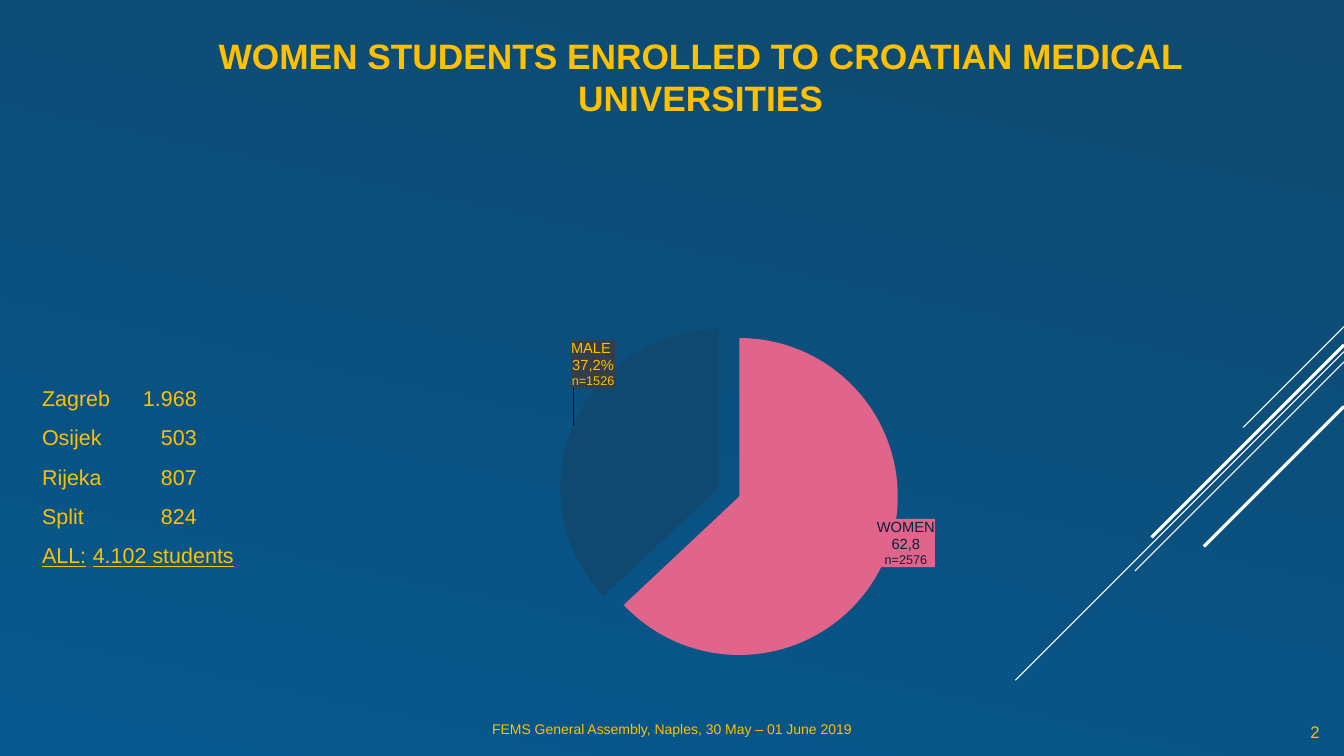
from dataclasses import dataclass

from lxml.etree import SubElement
from pptx import Presentation
from pptx.chart.data import CategoryChartData
from pptx.dml.color import RGBColor
from pptx.enum.chart import XL_CHART_TYPE, XL_LABEL_POSITION
from pptx.enum.shapes import MSO_CONNECTOR
from pptx.enum.text import MSO_ANCHOR, PP_ALIGN
from pptx.oxml import parse_xml
from pptx.oxml.ns import nsdecls, qn
from pptx.slide import Slide
from pptx.util import Cm, Pt

FONT = "Arial"
GOLD = "FFC000"
WIDTH, HEIGHT = 33.87, 19.05


@dataclass
class Stripe:
    """A 45 degree line running down and left from the slide's right edge."""
    top: float
    run: float
    weight: float


@dataclass
class Slice:
    name: str
    value: int
    label: tuple[str, ...]
    fill: str
    label_fill: str
    label_color: str
    explosion: int
    shift: tuple[float, float]


@dataclass
class Row:
    text: str
    tab: float
    tab_align: str = "r"
    underline: bool = False


STRIPES = [
    Stripe(8.23, 2.54, 0.75),
    Stripe(8.86, 8.28, 0.75),
    Stripe(9.12, 5.27, 0.75),
    Stripe(8.69, 4.85, 2.25),
    Stripe(10.24, 3.53, 2.25),
]
SLICES = [
    Slice("WOMEN", 63, ("WOMEN", "62,8", "n=2576"), "E1658B", "E1658B", "0A1F3C", 14, (0.106, 0.028)),
    Slice("MALE", 37, ("MALE ", "37,2%", "n=1526"), "0F496F", "343E4A", GOLD, 0, (-0.06, -0.171)),
]
ROWS = [
    Row("Zagreb\t1.968", 3.9),
    Row("Osijek\t503", 3.9),
    Row("Rijeka\t807", 3.9),
    Row("Split\t824", 3.9),
    Row("ALL:\t4.102 students", 1.28, "l", True),
]


def rgb(color: str) -> RGBColor:
    return RGBColor.from_string(color)


def set_font(font, size: float, color: str = GOLD, bold: bool = False, underline: bool = False) -> None:
    font.name = FONT
    font.size = Pt(size)
    font.bold = bold
    font.underline = underline
    font.color.rgb = rgb(color)


def add_text(s: Slide, text: str, box: tuple[float, ...], *, size: float,
             align=PP_ALIGN.CENTER, anchor=MSO_ANCHOR.TOP, bold: bool = False) -> None:
    tf = s.shapes.add_textbox(*map(Cm, box)).text_frame
    tf.word_wrap = True
    tf.vertical_anchor = anchor
    p = tf.paragraphs[0]
    p.alignment = align
    r = p.add_run()
    r.text = text
    set_font(r.font, size, bold=bold)


def add_enrolment(s: Slide) -> None:
    tf = s.shapes.add_textbox(Cm(0.81), Cm(9.57), Cm(6), Cm(4.75)).text_frame
    tf.word_wrap = True
    for i, row in enumerate(ROWS):
        p = tf.paragraphs[0] if i == 0 else tf.add_paragraph()
        tabs = SubElement(p._p.get_or_add_pPr(), qn("a:tabLst"))
        SubElement(tabs, qn("a:tab"), pos=str(Cm(row.tab)), algn=row.tab_align)
        p.space_before = Pt(3.8 if i else 0)
        p.space_after = Pt(6)
        r = p.add_run()
        r.text = row.text
        set_font(r.font, 15.3, underline=row.underline)


def add_stripe(s: Slide, stripe: Stripe) -> None:
    c = s.shapes.add_connector(
        MSO_CONNECTOR.STRAIGHT, Cm(WIDTH), Cm(stripe.top),
        Cm(WIDTH - stripe.run), Cm(stripe.top + stripe.run))
    c.line.color.rgb = rgb("FFFFFF")
    c.line.width = Pt(stripe.weight)
    SubElement(c._element.spPr, qn("a:effectLst"))


def layout_xml(x: float, y: float, extra: str = ""):
    return parse_xml(
        f'<c:layout {nsdecls("c")}><c:manualLayout>{extra}'
        f'<c:x val="{x}"/><c:y val="{y}"/></c:manualLayout></c:layout>')


def place_plot(chart, x: float, y: float, w: float, h: float) -> None:
    """Fix the inner plot area as fractions of the chart."""
    area = chart._chartSpace.chart.plotArea
    for old in area.findall(qn("c:layout")):
        area.remove(old)
    layout = layout_xml(x, y, '<c:layoutTarget val="inner"/><c:xMode val="edge"/><c:yMode val="edge"/>')
    for tag, val in (("c:w", w), ("c:h", h)):
        SubElement(layout[0], qn(tag), val=str(val))
    area.insert(0, layout)


def format_slice(series, i: int, part: Slice) -> None:
    point = series.points[i]
    point.format.fill.solid()
    point.format.fill.fore_color.rgb = rgb(part.fill)
    if part.explosion:
        d_pt = series._element.findall(qn("c:dPt"))[i]
        explosion = parse_xml(f'<c:explosion {nsdecls("c")} val="{part.explosion}"/>')
        d_pt.find(qn("c:spPr")).addprevious(explosion)

    label = point.data_label
    tf = label.text_frame
    for n, line in enumerate(part.label):
        p = tf.paragraphs[0] if n == 0 else tf.add_paragraph()
        r = p.add_run()
        r.text = line
        set_font(r.font, 9 if n == 2 else 10.5, part.label_color)
    label.position = XL_LABEL_POSITION.CENTER
    d_lbl = series._element.findall(".//" + qn("c:dLbl"))[i]
    d_lbl.find(qn("c:idx")).addnext(layout_xml(*part.shift))
    for old in d_lbl.findall(qn("c:spPr")):
        d_lbl.remove(old)
    d_lbl.find(qn("c:dLblPos")).addprevious(parse_xml(
        f'<c:spPr {nsdecls("c", "a")}><a:solidFill><a:srgbClr val="{part.label_fill}"/>'
        f'</a:solidFill></c:spPr>'))


def add_pie(s: Slide) -> None:
    data = CategoryChartData()
    data.categories = [part.name for part in SLICES]
    data.add_series("Series 1", [part.value for part in SLICES])
    chart = s.shapes.add_chart(
        XL_CHART_TYPE.PIE, Cm(6.73), Cm(4.37), Cm(22.33), Cm(13.54), data).chart
    chart.has_title = False
    chart.has_legend = False
    set_font(chart.font, 10, "FFFFFF")
    plot = chart.plots[0]
    plot.vary_by_categories = True
    place_plot(chart, 0.02, 0.29, 0.98, 0.59)
    for i, part in enumerate(SLICES):
        format_slice(plot.series[0], i, part)


def main() -> None:
    prs = Presentation()
    prs.slide_width, prs.slide_height = Cm(WIDTH), Cm(HEIGHT)
    s = prs.slides.add_slide(prs.slide_layouts[6])
    fill = s.background.fill
    fill.gradient()
    fill.gradient_angle = 258
    for stop, color in zip(fill.gradient_stops, ("0F496F", "06588E")):
        stop.color.rgb = rgb(color)

    for stripe in STRIPES:
        add_stripe(s, stripe)
    add_text(s, "WOMEN STUDENTS ENROLLED TO CROATIAN MEDICAL UNIVERSITIES",
             (5, 0.74, 25.32, 2.4), size=25.2, bold=True)
    add_enrolment(s)
    add_text(s, "FEMS General Assembly, Naples, 30 May – 01 June 2019",
             (6.45, 18.03, 20.96, 1.02), size=10)
    add_text(s, "2", (30.33, 16.97, 3.18, 1.85), size=12,
             align=PP_ALIGN.RIGHT, anchor=MSO_ANCHOR.BOTTOM)
    add_pie(s)
    prs.save("out.pptx")


if __name__ == "__main__":
    main()
